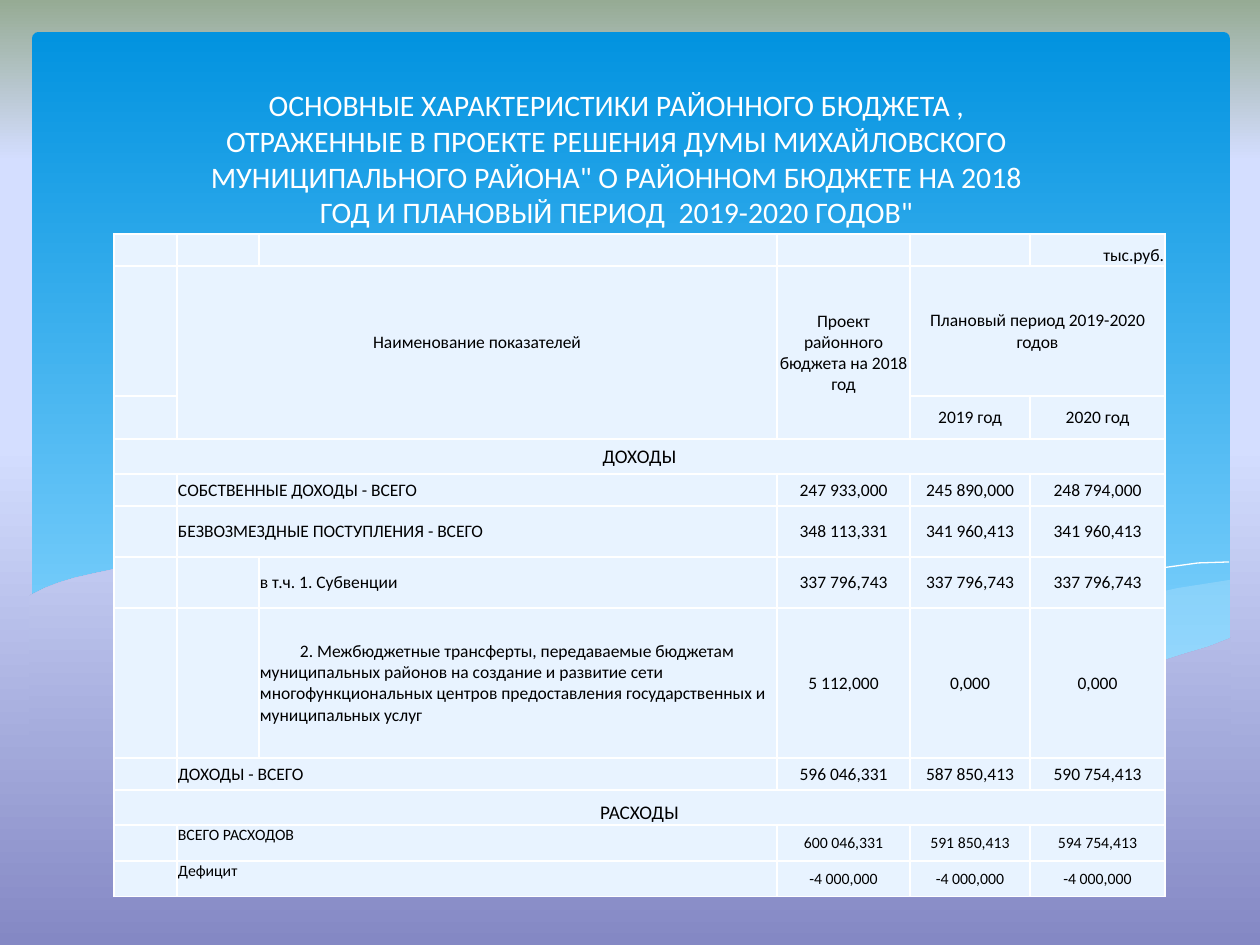
from dataclasses import dataclass
from itertools import product

from lxml.etree import SubElement
from pptx import Presentation
from pptx.dml.color import RGBColor
from pptx.enum.shapes import MSO_SHAPE
from pptx.enum.text import MSO_ANCHOR, MSO_AUTO_SIZE, PP_ALIGN
from pptx.oxml.ns import qn
from pptx.util import Pt

PX = 914400 / 126
FONT = "Calibri"
WHITE = RGBColor(0xFF, 0xFF, 0xFF)
BLACK = RGBColor(0x00, 0x00, 0x00)
CELL_BLUE = RGBColor(0xE8, 0xF3, 0xFF)
PALE_BLUE = RGBColor(0xC6, 0xE7, 0xFC)
PAGE_STOPS = [(0, RGBColor(0x84, 0x88, 0xC4)), (53, RGBColor(0xD4, 0xDE, 0xFF)),
              (83, RGBColor(0xD4, 0xDE, 0xFF)), (100, RGBColor(0x96, 0xAB, 0x94))]
SKY_STOPS = [(0, RGBColor(0x02, 0x93, 0xE0)), (100, RGBColor(0x83, 0xD3, 0xFE))]
# The page gradient between the lower and upper edge of the front wave
WAVE_STOPS = [(0, RGBColor(0xA4, 0xAB, 0xDC)), (100, RGBColor(0xC2, 0xCA, 0xF1))]
UPWARD, DOWNWARD = 90, 270

TITLE = ('ОСНОВНЫЕ ХАРАКТЕРИСТИКИ РАЙОННОГО БЮДЖЕТА , ОТРАЖЕННЫЕ В ПРОЕКТЕ РЕШЕНИЯ '
         'ДУМЫ МИХАЙЛОВСКОГО МУНИЦИПАЛЬНОГО РАЙОНА" О РАЙОННОМ БЮДЖЕТЕ НА 2018 ГОД '
         'И ПЛАНОВЫЙ ПЕРИОД  2019-2020 ГОДОВ"')
TRANSFERS = ("2. Межбюджетные трансферты, передаваемые бюджетам муниципальных районов "
             "на создание и развитие сети многофункциональных центров предоставления "
             "государственных и муниципальных услуг")


@dataclass
class Wave:
    points: list[tuple[int, int]]
    opacity: int = 0  # per cent; 0 leaves an open white line


@dataclass
class Entry:
    row: int
    column: int
    text: str
    rows: int = 1
    columns: int = 1
    size: int = 10
    align: PP_ALIGN = PP_ALIGN.CENTER
    anchor: MSO_ANCHOR = MSO_ANCHOR.MIDDLE
    indent: int = 0
    bottom: int = 0


@dataclass
class BudgetLine:
    row: int
    name: str
    values: tuple[str, str, str]
    column: int = 1
    size: int = 10
    anchor: MSO_ANCHOR = MSO_ANCHOR.MIDDLE
    indent: int = 0


WAVES = [
    Wave([(1229, 580), (1178, 588), (1123, 600), (1085, 609), (1014, 626), (949, 640),
          (890, 653), (833, 662), (888, 669), (939, 673), (998, 677), (1052, 677),
          (1099, 673), (1140, 666), (1178, 658), (1213, 645), (1230, 639), (1230, 580)], 29),
    Wave([(1125, 672), (1055, 662), (977, 648), (890, 630), (793, 607), (736, 593),
          (682, 583), (632, 575), (586, 568), (529, 563), (479, 562), (433, 562),
          (394, 564), (360, 570), (407, 575), (456, 583), (509, 593), (566, 607),
          (668, 631), (736, 645), (799, 656), (857, 665), (910, 672), (974, 678),
          (1031, 679), (1080, 677), (1125, 672)], 40),
    Wave([(389, 575), (413, 570), (445, 566), (488, 564), (546, 563), (591, 566),
          (643, 570), (701, 576), (766, 585), (838, 596), (916, 612), (1002, 633),
          (1095, 656), (1143, 670)]),
    Wave([(772, 651), (823, 638), (876, 625), (942, 609), (1016, 592), (1091, 578),
          (1147, 570), (1198, 563), (1229, 562)]),
]
FRONT_WAVE = [(1231, 638), (1208, 647), (1184, 654), (1159, 662), (1133, 668), (1103, 672),
              (1071, 674), (1037, 676), (999, 677), (959, 674), (915, 670), (867, 665),
              (816, 658), (760, 648), (699, 636), (634, 621), (563, 605), (493, 588),
              (428, 577), (368, 568), (315, 562), (266, 559), (223, 559), (184, 561),
              (150, 564), (120, 568), (96, 573), (74, 578), (58, 583), (45, 588),
              (37, 592), (29, 596), (29, 742), (1231, 742)]

COLUMNS = [63, 82, 518, 133, 120, 135]
ROWS = [32, 130, 43, 35, 32, 51, 51, 150, 32, 35, 36, 36]
LEFT = PP_ALIGN.LEFT
TOP = MSO_ANCHOR.TOP
HEADINGS = [
    Entry(0, 5, "тыс.руб.", align=PP_ALIGN.RIGHT, anchor=MSO_ANCHOR.BOTTOM),
    Entry(1, 1, "Наименование показателей", 2, 2, bottom=20),
    Entry(1, 3, "Проект районного бюджета на 2018 год", rows=2),
    Entry(1, 4, "Плановый период 2019-2020 годов", columns=2),
    Entry(2, 4, "2019 год"),
    Entry(2, 5, "2020 год"),
    Entry(3, 0, "ДОХОДЫ", columns=6, size=11),
    Entry(9, 0, "РАСХОДЫ", columns=6, size=11, anchor=MSO_ANCHOR.BOTTOM),
]
BUDGET = [
    BudgetLine(4, "СОБСТВЕННЫЕ ДОХОДЫ - ВСЕГО", ("247 933,000", "245 890,000", "248 794,000")),
    BudgetLine(5, "БЕЗВОЗМЕЗДНЫЕ ПОСТУПЛЕНИЯ - ВСЕГО",
               ("348 113,331", "341 960,413", "341 960,413")),
    BudgetLine(6, "в т.ч. 1. Субвенции", ("337 796,743",) * 3, column=2),
    BudgetLine(7, TRANSFERS, ("5 112,000", "0,000", "0,000"), column=2, indent=40),
    BudgetLine(8, "ДОХОДЫ - ВСЕГО", ("596 046,331", "587 850,413", "590 754,413")),
    BudgetLine(10, "ВСЕГО РАСХОДОВ", ("600 046,331", "591 850,413", "594 754,413"),
               size=9, anchor=TOP),
    BudgetLine(11, "Дефицит", ("-4 000,000",) * 3, size=9, anchor=TOP),
]


def px(length: float) -> int:
    return round(length * PX)


def add_color(parent, color: RGBColor):
    return SubElement(parent, qn("a:srgbClr"), val=str(color))


def set_gradient(owner, fill, stops, angle: int) -> None:
    fill.gradient()
    fill.gradient_angle = angle
    stop_list = owner.element.find(".//" + qn("a:gsLst"))
    for stop in list(stop_list):
        stop_list.remove(stop)
    for position, color in stops:
        add_color(SubElement(stop_list, qn("a:gs"), pos=str(position * 1000)), color)


def set_font(para, size: int, color: RGBColor) -> None:
    para.font.name = FONT
    para.font.size = Pt(size)
    para.font.color.rgb = color


def draw_outline(page, points, closed: bool):
    builder = page.shapes.build_freeform(*points[0], scale=PX)
    builder.add_line_segments(points[1:], close=closed)
    shape = builder.convert_to_shape()
    shape.shadow.inherit = False
    return shape


def draw_wave(page, wave: Wave) -> None:
    shape = draw_outline(page, wave.points, wave.opacity > 0)
    if wave.opacity:
        shape.fill.solid()
        shape.fill.fore_color.rgb = PALE_BLUE
        color = shape.element.spPr.find(qn("a:solidFill"))[0]
        SubElement(color, qn("a:alpha"), val=str(wave.opacity * 1000))
        shape.line.fill.background()
    else:
        shape.fill.background()
        shape.line.color.rgb = WHITE
        shape.line.width = Pt(0)


def style_cell(cell) -> None:
    cell.margin_left = cell.margin_right = cell.margin_top = px(1)
    cell.margin_bottom = 0
    set_font(cell.text_frame.paragraphs[0], 10, BLACK)
    properties = cell._tc.get_or_add_tcPr()
    for side in ("lnL", "lnR", "lnT", "lnB"):
        border = SubElement(properties, qn(f"a:{side}"), w=str(Pt(1)))
        add_color(SubElement(border, qn("a:solidFill")), WHITE)
    cell.fill.solid()
    cell.fill.fore_color.rgb = CELL_BLUE


def write_entry(table, entry: Entry) -> None:
    cell = table.cell(entry.row, entry.column)
    if entry.rows * entry.columns > 1:
        cell.merge(table.cell(entry.row + entry.rows - 1, entry.column + entry.columns - 1))
    cell.vertical_anchor = entry.anchor
    cell.margin_bottom = px(entry.bottom)
    para = cell.text_frame.paragraphs[0]
    para.text = entry.text
    para.alignment = entry.align
    set_font(para, entry.size, BLACK)
    if entry.indent:
        para._p.get_or_add_pPr().set("indent", str(px(entry.indent)))


def write_budget_line(table, line: BudgetLine) -> None:
    write_entry(table, Entry(line.row, line.column, line.name, columns=3 - line.column,
                             size=line.size, align=LEFT, anchor=line.anchor,
                             indent=line.indent))
    for column, value in enumerate(line.values, 3):
        write_entry(table, Entry(line.row, column, value, size=line.size))


def main() -> None:
    deck = Presentation()
    deck.slide_width, deck.slide_height = px(1260), px(945)
    page = deck.slides.add_slide(deck.slide_layouts[5])
    set_gradient(page, page.background.fill, PAGE_STOPS, UPWARD)

    # Sky panel and waves
    sky = page.shapes.add_shape(MSO_SHAPE.ROUNDED_RECTANGLE, px(32), px(32), px(1198), px(653))
    sky.adjustments[0] = 0.01
    sky.shadow.inherit = False
    sky.line.fill.background()
    set_gradient(sky, sky.fill, SKY_STOPS, DOWNWARD)
    for wave in WAVES:
        draw_wave(page, wave)
    front = draw_outline(page, FRONT_WAVE, True)
    front.line.fill.background()
    set_gradient(front, front.fill, WAVE_STOPS, UPWARD)

    # Title, raised above the panel
    title = page.shapes.title
    title.left, title.top, title.width, title.height = px(174), px(106), px(885), px(130)
    page.shapes._spTree.append(title.element)
    title.text_frame.text = TITLE
    title.text_frame.word_wrap = True
    title.text_frame.auto_size = MSO_AUTO_SIZE.NONE
    title.text_frame.vertical_anchor = MSO_ANCHOR.BOTTOM
    title.text_frame.paragraphs[0].alignment = PP_ALIGN.CENTER
    set_font(title.text_frame.paragraphs[0], 17, WHITE)

    # Budget table
    table = page.shapes.add_table(len(ROWS), len(COLUMNS), px(114), px(234),
                                  px(sum(COLUMNS)), px(sum(ROWS))).table
    table.first_row = table.horz_banding = False
    for column, width in zip(table.columns, COLUMNS):
        column.width = px(width)
    for row, height in zip(table.rows, ROWS):
        row.height = px(height)
    for row, column in product(range(len(ROWS)), range(len(COLUMNS))):
        style_cell(table.cell(row, column))
    for entry in HEADINGS:
        write_entry(table, entry)
    for line in BUDGET:
        write_budget_line(table, line)
    deck.save("out.pptx")


if __name__ == "__main__":
    main()
